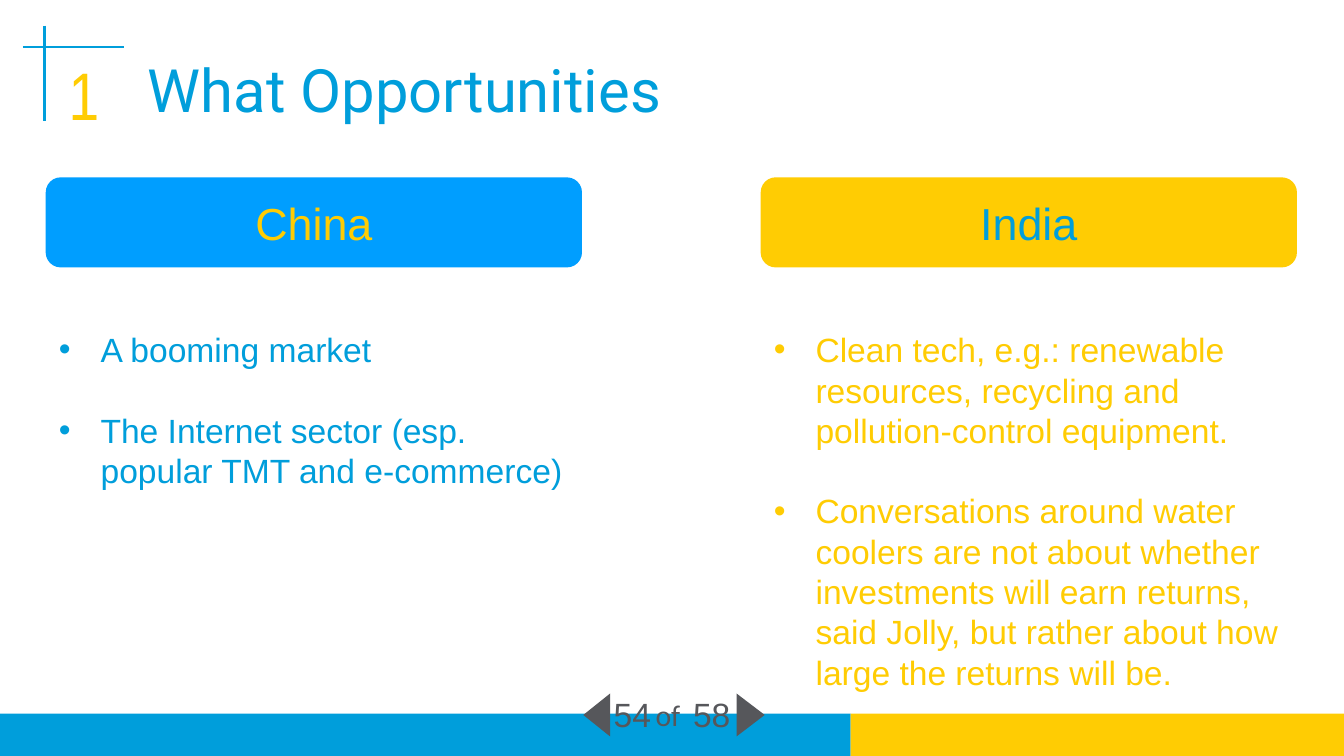
from dataclasses import dataclass

from lxml import etree
from pptx import Presentation
from pptx import util as u
from pptx.dml.color import RGBColor
from pptx.enum import shapes, text
from pptx.oxml import ns

WIDE = u.Inches(10)
HIGH = u.Inches(5.625)
CELL = WIDE // 100
KIND = shapes.MSO_SHAPE


@dataclass(frozen=True)
class Theme:
    blue: str = "009EDB"
    sky: str = "009EFF"
    gold: str = "FFCC03"
    gray: str = "56575B"
    white: str = "FFFFFF"
    sans: str = "Arial"
    slim: str = "Arial Narrow"
    head: str = "Roboto"
    small: str = "Calibri"
    title: int = 32
    mark: int = 36
    label: int = 24
    body: int = 18
    note: int = 16
    pitch: float = 21.6


LOOK = Theme()


def grid(*cells):
    return [round(cell * CELL) for cell in cells]


def style(para, color, size, face):
    para.font.size = u.Pt(size)
    para.font.name = face
    para.font.color.rgb = RGBColor.from_string(color)


def paint(shape, fill):
    shape.shadow.inherit = False
    shape.line.fill.background()
    if fill:
        shape.fill.solid()
        shape.fill.fore_color.rgb = RGBColor.from_string(fill)
    else:
        shape.fill.background()


def block(slide, kind, place, fill=None):
    shape = slide.shapes.add_shape(kind, *grid(*place))
    paint(shape, fill)
    return shape


def label(shape, words, color, size, face=LOOK.sans):
    frame = shape.text_frame
    frame.margin_left = frame.margin_right = 0
    frame.margin_top = frame.margin_bottom = 0
    frame.word_wrap = False
    frame.vertical_anchor = text.MSO_ANCHOR.MIDDLE
    para = frame.paragraphs[0]
    para.text = words
    para.alignment = text.PP_ALIGN.CENTER
    style(para, color, size, face)


def rule(slide, *ends):
    line = slide.shapes.add_connector(shapes.MSO_CONNECTOR.STRAIGHT, *grid(*ends))
    line.line.color.rgb = RGBColor.from_string(LOOK.blue)
    line.line.width = u.Pt(1.5)
    etree.SubElement(line.element.spPr, ns.qn("a:effectLst"))


def arrow(slide, base, tip):
    top, mid, low = 51.6, 53.2, 54.8
    pen = slide.shapes.build_freeform(*grid(base, top))
    pen.add_line_segments([grid(tip, mid), grid(base, low)], close=True)
    paint(pen.convert_to_shape(), LOOK.gray)


def bullet(para):
    props = para._p.get_or_add_pPr()
    props.set("marL", str(u.Inches(0.31)))
    props.set("indent", str(-u.Inches(0.31)))
    font = etree.SubElement(props, ns.qn("a:buFont"))
    font.set("typeface", LOOK.sans)
    etree.SubElement(props, ns.qn("a:buChar")).set("char", "•")


def points(slide, place, items, color):
    frame = slide.shapes.add_textbox(*grid(*place)).text_frame
    frame.word_wrap = True
    for index, item in enumerate(items):
        para = frame.add_paragraph() if index else frame.paragraphs[0]
        para.text = item
        para.line_spacing = u.Pt(LOOK.pitch)
        para.space_before = u.Pt(LOOK.pitch if index else 0)
        bullet(para)
        style(para, color, LOOK.body, LOOK.sans)


def column(slide, left, name, fill, ink, items, color):
    card = block(slide, KIND.ROUNDED_RECTANGLE, (left, 13.2, 39.9, 6.7), fill)
    label(card, name, ink, LOOK.label)
    points(slide, (left, 24, 39.9, 28), items, color)


def header(slide):
    title = slide.shapes.title
    title.left, title.top, title.width, title.height = grid(10, 3.4, 72.5, 6.4)
    frame = title.text_frame
    frame.vertical_anchor = text.MSO_ANCHOR.TOP
    para = frame.paragraphs[0]
    para.text = "What Opportunities"
    para.alignment = text.PP_ALIGN.LEFT
    style(para, LOOK.blue, LOOK.title, LOOK.head)
    rule(slide, 3.3, 1.9, 3.3, 9)
    mark = block(slide, KIND.TEAR, (3.8, 4.9, 4.9, 4.2), LOOK.white)
    label(mark, "1", LOOK.gold, LOOK.mark, LOOK.slim)
    rule(slide, 1.7, 3.5, 9.2, 3.5)


def footer(slide):
    split = 63.3
    for left, width, fill in ((0, split, LOOK.blue), (split, 100 - split, LOOK.gold)):
        block(slide, KIND.RECTANGLE, (left, 53.1, width, 3.15), fill)
    arrow(slide, 54.8, 56.9)
    arrow(slide, 45.4, 43.4)
    for left, width, words, size, face in (
        (43.3, 7.5, "54", LOOK.body, LOOK.sans),
        (47.6, 4.2, "of", LOOK.note, LOOK.small),
        (50, 5.9, "58", LOOK.body, LOOK.sans),
    ):
        spot = slide.shapes.add_textbox(*grid(left, 51.5, width, 3.3))
        label(spot, words, LOOK.gray, size, face)


def main():
    deck = Presentation()
    deck.slide_width, deck.slide_height = WIDE, HIGH
    slide = deck.slides.add_slide(deck.slide_layouts[5])
    footer(slide)
    header(slide)
    column(slide, 3.4, "China", LOOK.sky, LOOK.gold, [
        "A booming market",
        "The Internet sector (esp. popular TMT and e-commerce)",
    ], LOOK.blue)
    column(slide, 56.6, "India", LOOK.gold, LOOK.blue, [
        "Clean tech, e.g.: renewable resources, recycling and "
        "pollution-control equipment.",
        "Conversations around water coolers are not about whether "
        "investments will earn returns, said Jolly, but rather about "
        "how large the returns will be.",
    ], LOOK.gold)
    deck.save("out.pptx")


if __name__ == "__main__":
    main()
